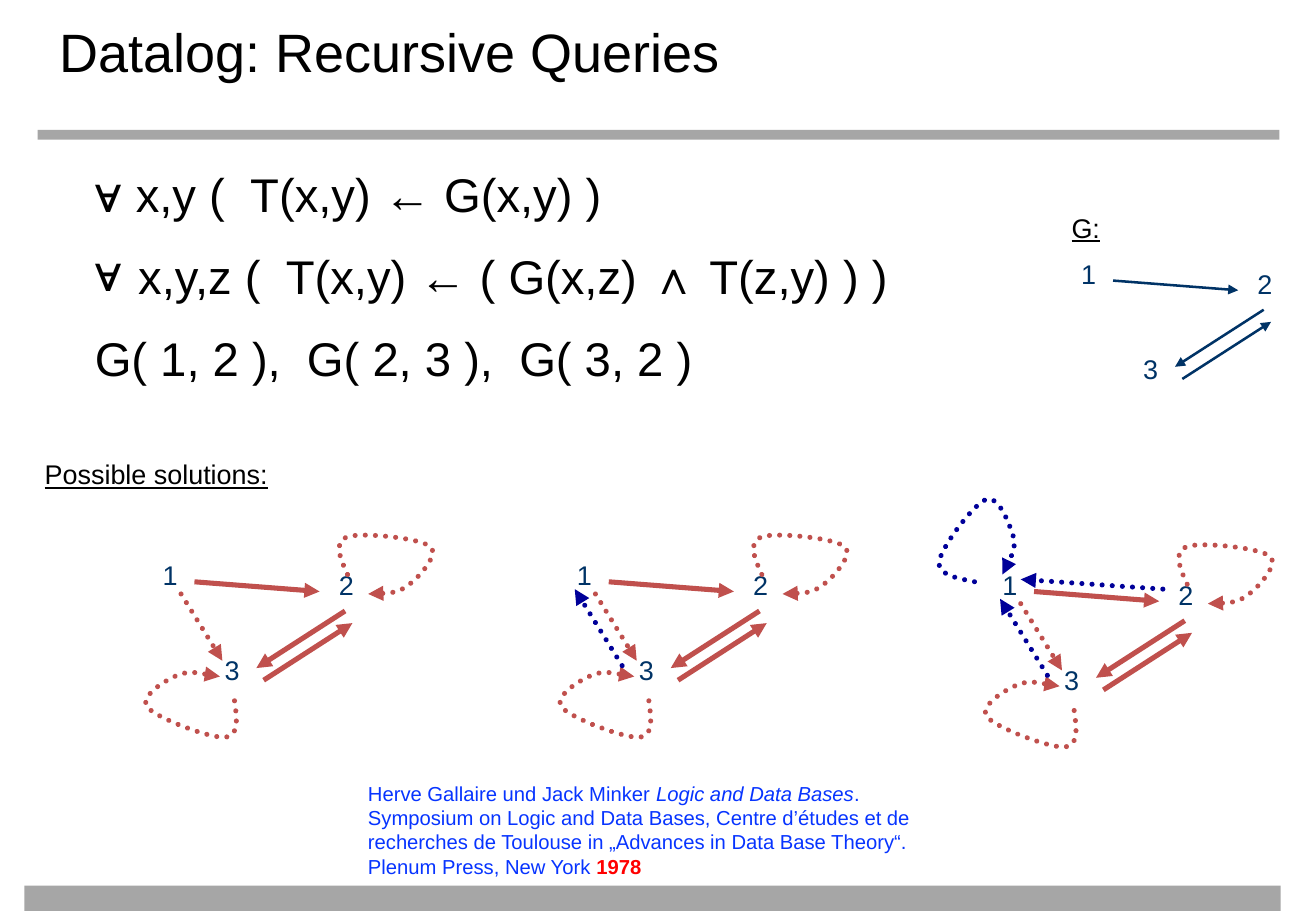
from lxml import etree
from pptx import Presentation
from pptx import util as u
from pptx.dml.color import RGBColor
from pptx.enum import dml, shapes, text
from pptx.oxml.ns import qn


class Theme:
    font = "Arial"
    ink, navy, red, blue = "000000", "003366", "C0504D", "000099"
    gray, cite, year = "A6A6A6", "0734FF", "FF0000"
    title, body, label, small = 32, 28, 16, 12
    thin, thick = 1.5, 3


TITLE = "Datalog: Recursive Queries"
# bullet sign, text
RULES = [
    (None, "∀ x,y (  T(x,y) ← G(x,y) )"),
    ("∀", " x,y,z (  T(x,y) ← ( G(x,z) ∧ T(z,y) ) )"),
    (None, "G( 1, 2 ),  G( 2, 3 ),  G( 3, 2 )"),
]
HEADS = [("Possible solutions:", (0.27, 3.75, 2.06, 0.35)),
         ("G:", (8.72, 1.72, 0.44, 0.35))]
SOURCE = [
    ("Herve Gallaire und Jack Minker ", {}),
    ("Logic and Data Bases", {"italic": True}),
    (". Symposium on Logic and Data Bases, Centre d’études et de recherches "
     "de Toulouse in „Advances in Data Base Theory“. Plenum Press, New York ", {}),
    ("1978", {"bold": True, "color": Theme.year}),
]
BARS = [(0.2, 7.29, 10.34, 0.21), (0.31, 1.07, 10.22, 0.08)]

# One graph, placed as in the first solution; the others are shifted.
NODES = {"1": (1.24, 4.58), "2": (2.69, 4.66), "3": (1.75, 5.36)}
FACTS = [((1.6, 4.79), (2.63, 4.87)),
         ((2.84, 5.03), (2.11, 5.5)),
         ((2.17, 5.6), (2.9, 5.13))]
PATH13 = [(1.49, 4.89), (1.83, 5.44)]
PATH31 = [(1.71, 5.48), (1.32, 4.85)]
PATH21 = [(2.66, 4.77), (1.49, 4.69)]
# Loops: a start, then three Bezier points for each arc
LOOP1 = [(1.11, 4.71), (0.96, 4.68), (0.8, 4.65), (0.82, 4.54),
         (0.84, 4.42), (1.11, 4.06), (1.21, 4.03),
         (1.31, 4), (1.4, 4.24), (1.43, 4.34),
         (1.45, 4.44), (1.39, 4.55), (1.34, 4.65)]
LOOP2 = [(2.86, 4.73), (2.8, 4.6), (2.74, 4.46), (2.86, 4.42),
         (2.97, 4.38), (3.46, 4.43), (3.54, 4.5),
         (3.62, 4.56), (3.45, 4.75), (3.37, 4.81),
         (3.28, 4.88), (3.16, 4.89), (3.03, 4.89)]
LOOP3 = [(1.93, 5.77), (1.95, 5.92), (1.97, 6.06), (1.85, 6.07),
         (1.73, 6.08), (1.28, 5.91), (1.21, 5.82),
         (1.15, 5.73), (1.36, 5.6), (1.46, 5.56),
         (1.56, 5.52), (1.68, 5.55), (1.81, 5.57)]
DERIVED = [PATH13, LOOP2, LOOP3]
# shift, extra facts in blue
ANSWERS = [((0, 0), []),
           ((3.41, 0), [PATH31]),
           ((6.91, 0.08), [LOOP1, PATH31, PATH21])]
BASE = (7.56, -2.48)


def rgb(code):
    return RGBColor.from_string(code)


def place(shape, box):
    for name, val in zip(("left", "top", "width", "height"), box):
        setattr(shape, name, u.Inches(val))


def style(font, size, color=Theme.ink, **more):
    for name, val in {"name": Theme.font, "size": u.Pt(size), **more}.items():
        setattr(font, name, val)
    font.color.rgb = rgb(color)


def inset(frame, x, y):
    for side, val in {"left": x, "right": x, "top": y, "bottom": y}.items():
        setattr(frame, "margin_" + side, u.Inches(val))


def add_label(slide, words, box, color=Theme.ink, **more):
    shape = slide.shapes.add_textbox(*map(u.Inches, box))
    frame = shape.text_frame
    frame.word_wrap = False
    frame.auto_size = text.MSO_AUTO_SIZE.SHAPE_TO_FIT_TEXT
    para = frame.paragraphs[0]
    para.line_spacing = 0.9
    run = para.add_run()
    run.text = words
    style(run.font, Theme.label, color, **more)


def curve(shape):
    """Turn each three straight steps of a freeform into one Bezier arc."""
    path = next(shape.element.iter(qn("a:path")))
    steps = path.findall(qn("a:lnTo"))
    for i in range(0, len(steps), 3):
        arc = etree.Element(qn("a:cubicBezTo"))
        steps[i].addprevious(arc)
        for step in steps[i:i + 3]:
            arc.append(step[0])
            path.remove(step)


def add_arrow(slide, points, shift, color, width, dotted=False):
    pts = [(u.Inches(x + shift[0]), u.Inches(y + shift[1])) for x, y in points]
    if len(pts) == 2:
        shape = slide.shapes.add_connector(
            shapes.MSO_CONNECTOR.STRAIGHT, *pts[0], *pts[1])
        etree.SubElement(shape.element.spPr, qn("a:effectLst"))
    else:
        pen = slide.shapes.build_freeform(*pts[0])
        pen.add_line_segments(pts[1:], close=False)
        shape = pen.convert_to_shape()
        curve(shape)
        shape.fill.background()
        shape.shadow.inherit = False
    line = shape.line
    line.color.rgb = rgb(color)
    line.width = u.Pt(width)
    ln = shape.element.spPr.find(qn("a:ln"))
    if dotted:
        line.dash_style = dml.MSO_LINE.ROUND_DOT
        ln.set("cap", "rnd")
    etree.SubElement(ln, qn("a:tailEnd"), type="triangle")


def add_nodes(slide, shift):
    for name, (x, y) in NODES.items():
        box = (x + shift[0], y + shift[1], 0.33, 0.35)
        add_label(slide, name, box, Theme.navy)


def fill_title(shape):
    place(shape, (0.42, 0.17, 10, 0.56))
    frame = shape.text_frame
    inset(frame, 0.07, 0.03)
    frame.text = TITLE
    para = frame.paragraphs[0]
    para.alignment = text.PP_ALIGN.LEFT
    para.line_spacing = 0.92
    style(para.runs[0].font, Theme.title)


def fill_rules(shape):
    place(shape, (0.42, 1.31, 10, 5.44))
    frame = shape.text_frame
    frame.auto_size = text.MSO_AUTO_SIZE.NONE
    inset(frame, 0.1, 0.05)
    for i, (sign, words) in enumerate(RULES):
        para = frame.add_paragraph() if i else frame.paragraphs[0]
        para.level = 1
        para.space_before = u.Pt(15 if i else 0)
        props = para._p.get_or_add_pPr()
        props.set("marL", str(u.Inches(0.51)))
        props.set("indent", str(u.Inches(-0.25)))
        if sign:
            etree.SubElement(props, qn("a:buFont"), typeface=Theme.font)
            etree.SubElement(props, qn("a:buChar"), char=sign)
        else:
            etree.SubElement(props, qn("a:buNone"))
        run = para.add_run()
        run.text = words
        style(run.font, Theme.body)


def add_source(slide):
    box = slide.shapes.add_textbox(*map(u.Inches, (2.93, 6.38, 5, 0.91)))
    frame = box.text_frame
    frame.word_wrap = True
    for words, look in SOURCE:
        run = frame.paragraphs[0].add_run()
        run.text = words
        style(run.font, Theme.small, **{"color": Theme.cite, **look})


def main():
    deck = Presentation()
    deck.slide_width, deck.slide_height = u.Inches(10.83), u.Inches(7.5)
    slide = deck.slides.add_slide(deck.slide_layouts[1])
    fill_title(slide.shapes.title)
    fill_rules(slide.placeholders[1])
    for box in BARS:
        bar = slide.shapes.add_shape(
            shapes.MSO_SHAPE.RECTANGLE, *map(u.Inches, box))
        bar.shadow.inherit = False
        bar.fill.solid()
        bar.fill.fore_color.rgb = rgb(Theme.gray)
        bar.line.fill.background()
    for words, box in HEADS:
        add_label(slide, words, box, underline=True)
    add_nodes(slide, BASE)
    for fact in FACTS:
        add_arrow(slide, fact, BASE, Theme.navy, Theme.thin)
    for shift, extra in ANSWERS:
        add_nodes(slide, shift)
        for group, color, dotted in ((FACTS, Theme.red, False),
                                     (DERIVED, Theme.red, True),
                                     (extra, Theme.blue, True)):
            for points in group:
                add_arrow(slide, points, shift, color, Theme.thick, dotted)
    add_source(slide)
    deck.save("out.pptx")


if __name__ == "__main__":
    main()
